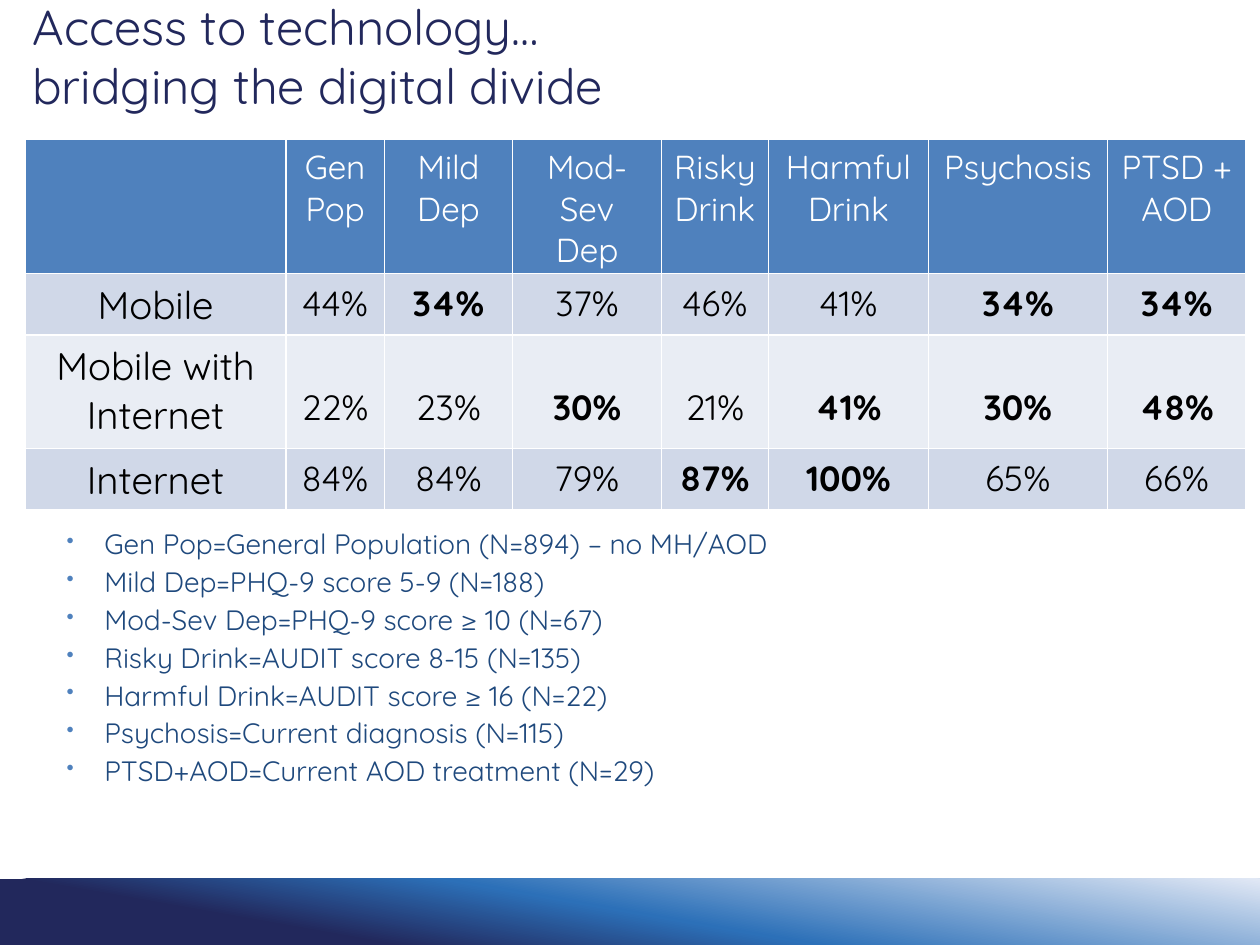
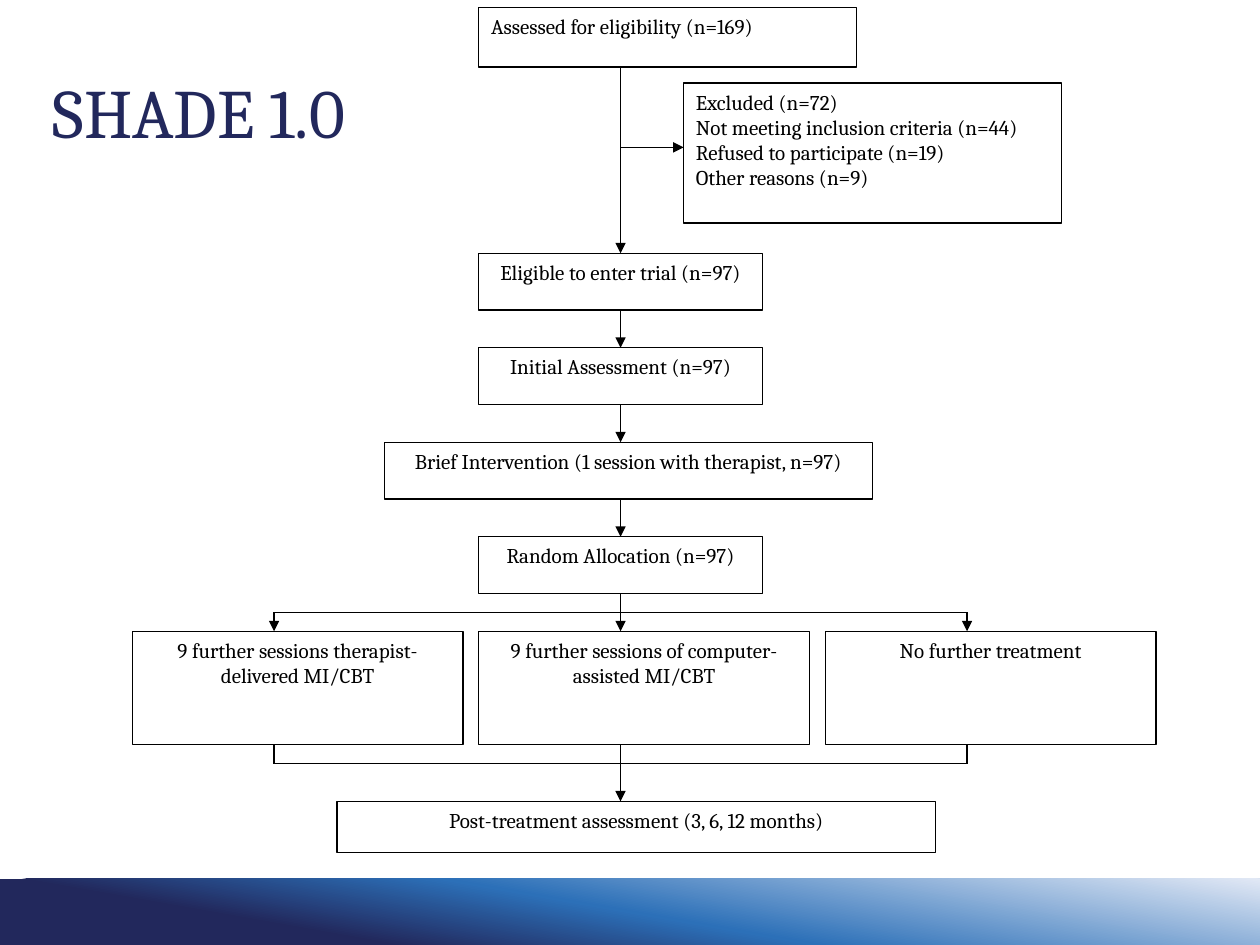
"""Build two slides: access to technology, and the SHADE 1.0 trial flow."""
from lxml.etree import SubElement
from pptx import Presentation
from pptx.dml.color import RGBColor
from pptx.enum.shapes import MSO_CONNECTOR, MSO_SHAPE
from pptx.enum.text import MSO_ANCHOR, PP_ALIGN
from pptx.oxml import parse_xml
from pptx.oxml.ns import nsdecls, qn
from pptx.util import Inches, Pt

WIDTH, HEIGHT = Inches(10), Inches(7.5)
COLORS = {
    "navy": "22285C", "blue": "2C70B8", "pale": "E1E8F5",
    "header": "4F81BD", "odd": "D0D8E8", "even": "E9EDF4",
    "note": "1F497D", "white": "FFFFFF", "black": "000000",
}
SANS, SERIF = "Quicksand", "Cambria"
BAND_STOPS = [(24, "navy"), (50, "blue"), (100, "pale")]
BAND_ANGLE = 280

COLUMN, ROW = 0.125, 0.15
ORIGIN_X, ORIGIN_Y = 0.05, 0.06
LEFT_ARM, TRUNK, RIGHT_ARM = 17, 39, 61

TABLE_COLUMNS = [2.07, 0.78, 1.02, 1.18, 0.85, 1.27, 1.42, 1.1]
TABLE_ROWS = [1.01, 0.47, 0.9, 0.47]
ACCESS = [
    ["", "Gen Pop", "Mild Dep", "Mod-Sev Dep", "Risky Drink", "Harmful Drink",
     "Psychosis", "PTSD + AOD"],
    ["Mobile", "44%", "34%", "37%", "46%", "41%", "34%", "34%"],
    ["Mobile with Internet", "22%", "23%", "30%", "21%", "41%", "30%", "48%"],
    ["Internet", "84%", "84%", "79%", "87%", "100%", "65%", "66%"],
]
BOLD_CELLS = {1: (2, 6, 7), 2: (3, 5, 6, 7), 3: (4, 5)}
TALL_ROW = 2
GROUPS = [
    "Gen Pop=General Population (N=894) – no MH/AOD",
    "Mild Dep=PHQ-9 score 5-9 (N=188)",
    "Mod-Sev Dep=PHQ-9 score ≥ 10 (N=67)",
    "Risky Drink=AUDIT score 8-15 (N=135)",
    "Harmful Drink=AUDIT score ≥ 16 (N=22)",
    "Psychosis=Current diagnosis (N=115)",
    "PTSD+AOD=Current AOD treatment (N=29)",
]

SCREENING = [
    (30, 0, 24, 3.15, ["Assessed for eligibility (n=169)"]),
    (43, 4, 24, 7.4, ["Excluded (n=72)", "Not meeting inclusion criteria (n=44)",
                      "Refused to participate (n=19)", "Other reasons (n=9)"]),
]
STAGES = [
    (30, 13, 18, 3, "Eligible to enter trial (n=97)"),
    (30, 18, 18, 3, "Initial Assessment (n=97)"),
    (24, 23, 31, 3, "Brief Intervention (1 session with therapist, n=97)"),
    (30, 28, 18, 3, "Random Allocation (n=97)"),
    (8, 33, 21, 6, "9 further sessions therapist-delivered MI/CBT"),
    (30, 33, 21, 6, "9 further sessions of computer-assisted MI/CBT"),
    (52, 33, 21, 6, "No further treatment"),
    (21, 42, 38, 2.7, "Post-treatment assessment (3, 6, 12 months)"),
]
TRUNK_ARROWS = [(3.15, 13), (16, 18), (21, 23), (26, 28), (31, 33), (39, 42)]


def color(name):
    """Return a named colour."""
    return RGBColor.from_string(COLORS[name])


def share(left, top, width, height):
    """Turn shares of the slide into a position and size."""
    return (int(left * WIDTH), int(top * HEIGHT),
            int(width * WIDTH), int(height * HEIGHT))


def point(column, row):
    """Return the place of a point on the flow grid."""
    return Inches(ORIGIN_X + column * COLUMN), Inches(ORIGIN_Y + row * ROW)


def add_span(para, text, font, size, ink, bold=False):
    """Add one run to a paragraph."""
    span = para.add_run()
    span.text = text
    span.font.name, span.font.size, span.font.bold = font, Pt(size), bold
    span.font.color.rgb = color(ink)


def next_para(frame, index):
    """Return the first paragraph, or a new one after it."""
    return frame.add_paragraph() if index else frame.paragraphs[0]


def add_band(page):
    """Add the gradient band at the foot of the slide."""
    band = page.shapes.add_shape(MSO_SHAPE.RECTANGLE, *share(0, 0.93, 1, 0.07))
    band.shadow.inherit = False
    band.line.fill.background()
    stops = "".join(
        f'<a:gs pos="{place * 1000}"><a:srgbClr val="{COLORS[name]}"/></a:gs>'
        for place, name in BAND_STOPS)
    gradient = parse_xml(
        f'<a:gradFill {nsdecls("a")}><a:gsLst>{stops}</a:gsLst>'
        f'<a:lin ang="{BAND_ANGLE * 60000}" scaled="0"/></a:gradFill>')
    band._element.spPr.find(qn("a:prstGeom")).addnext(gradient)


def add_page(deck):
    """Add a blank slide with its band."""
    page = deck.slides.add_slide(deck.slide_layouts[6])
    add_band(page)
    return page


def add_title(page, area, lines, font, size, align):
    """Add a navy title, one line of text per item."""
    frame = page.shapes.add_textbox(*area).text_frame
    frame.word_wrap = True
    frame.vertical_anchor = MSO_ANCHOR.MIDDLE
    para = frame.paragraphs[0]
    para.alignment = align
    for index, line in enumerate(lines):
        if index:
            para.add_line_break()
        add_span(para, line, font, size, "navy")


def add_access_table(page):
    """Add the table of access by group."""
    area = share(0.02, 0.147, 0.969, 0.38)
    table = page.shapes.add_table(len(TABLE_ROWS), len(TABLE_COLUMNS), *area).table
    for column, width in zip(table.columns, TABLE_COLUMNS):
        column.width = Inches(width)
    for row, height in zip(table.rows, TABLE_ROWS):
        row.height = Inches(height)
    for row, texts in enumerate(ACCESS):
        for column, text in enumerate(texts):
            fill_cell(table.cell(row, column), text, row, column)


def fill_cell(cell, text, row, column):
    """Colour one table cell and write its text."""
    cell.fill.solid()
    cell.fill.fore_color.rgb = color("header" if row == 0 else "odd" if row % 2 else "even")
    cell.margin_left = cell.margin_right = Inches(0.1)
    cell.margin_top = cell.margin_bottom = Inches(0.06)
    if row == TALL_ROW and column:
        cell.vertical_anchor = MSO_ANCHOR.BOTTOM
        cell.margin_bottom = Inches(0.15)
    if text:
        para = cell.text_frame.paragraphs[0]
        para.alignment = PP_ALIGN.CENTER
        size = 19 if row == 0 else 20 if column else 22
        add_span(para, text, SANS, size, "black" if row else "white",
                 column in BOLD_CELLS.get(row, ()))


def add_bullet(para):
    """Give a paragraph a hanging bullet."""
    properties = para._p.get_or_add_pPr()
    properties.set("marL", str(Inches(0.38)))
    properties.set("indent", str(-Inches(0.3)))
    tint = SubElement(properties, qn("a:buClr"))
    SubElement(tint, qn("a:srgbClr"), val=COLORS["header"])
    SubElement(properties, qn("a:buSzPct"), val="76000")
    SubElement(properties, qn("a:buChar"), char="•")


def add_group_notes(page):
    """Add the list that explains the groups."""
    frame = page.shapes.add_textbox(*share(0.035, 0.551, 0.824, 0.268)).text_frame
    frame.word_wrap = True
    for index, group in enumerate(GROUPS):
        para = next_para(frame, index)
        add_bullet(para)
        if index:
            para.space_before = Pt(2.4)
        add_span(para, group, SANS, 16, "note")


def add_step(page, column, row, columns, rows, lines, align):
    """Add one outlined box of the flow."""
    size = Inches(columns * COLUMN), Inches(rows * ROW)
    box = page.shapes.add_shape(MSO_SHAPE.RECTANGLE, *point(column, row), *size)
    box.shadow.inherit = False
    box.fill.solid()
    box.fill.fore_color.rgb = color("white")
    box.line.color.rgb = color("black")
    box.line.width = Pt(0.75)
    frame = box.text_frame
    frame.word_wrap = True
    frame.vertical_anchor = MSO_ANCHOR.TOP
    for index, line in enumerate(lines):
        para = next_para(frame, index)
        para.alignment = align
        add_span(para, line, SERIF, 12, "black")


def add_line(page, start, end, arrow=False):
    """Join two grid points, with an arrowhead if asked."""
    line = page.shapes.add_connector(MSO_CONNECTOR.STRAIGHT, *point(*start), *point(*end))
    line.line.color.rgb = color("black")
    line.line.width = Pt(0.75)
    if arrow:
        SubElement(line.line._get_or_add_ln(), qn("a:tailEnd"), type="triangle")
    SubElement(line._element.spPr, qn("a:effectLst"))


def add_flow_lines(page):
    """Add the trunk, the branches and the rails of the flow."""
    for top, bottom in TRUNK_ARROWS:
        add_line(page, (TRUNK, top), (TRUNK, bottom), arrow=True)
    add_line(page, (TRUNK, 7.4), (43, 7.4), arrow=True)
    for arm in (LEFT_ARM, RIGHT_ARM):
        add_line(page, (arm, 32), (arm, 33), arrow=True)
        add_line(page, (arm, 39), (arm, 40))
    for rail in (32, 40):
        add_line(page, (LEFT_ARM, rail), (RIGHT_ARM, rail))


def build_access(deck):
    """Build the slide on access to technology."""
    page = add_page(deck)
    add_title(page, share(0.016, -0.025, 0.972, 0.167),
              ["Access to technology…", "bridging the digital divide"],
              SANS, 28, PP_ALIGN.LEFT)
    add_access_table(page)
    add_group_notes(page)


def build_trial(deck):
    """Build the slide with the trial flow."""
    page = add_page(deck)
    for *place, lines in SCREENING:
        add_step(page, *place, lines, PP_ALIGN.LEFT)
    for *place, label in STAGES:
        add_step(page, *place, [label], PP_ALIGN.CENTER)
    add_flow_lines(page)
    add_title(page, share(0.028, 0.059, 0.26, 0.116), ["SHADE 1.0"],
              SERIF, 39.6, PP_ALIGN.CENTER)


def main():
    """Build and save the deck."""
    deck = Presentation()
    deck.slide_width, deck.slide_height = WIDTH, HEIGHT
    build_access(deck)
    build_trial(deck)
    deck.save("out.pptx")


if __name__ == "__main__":
    main()
